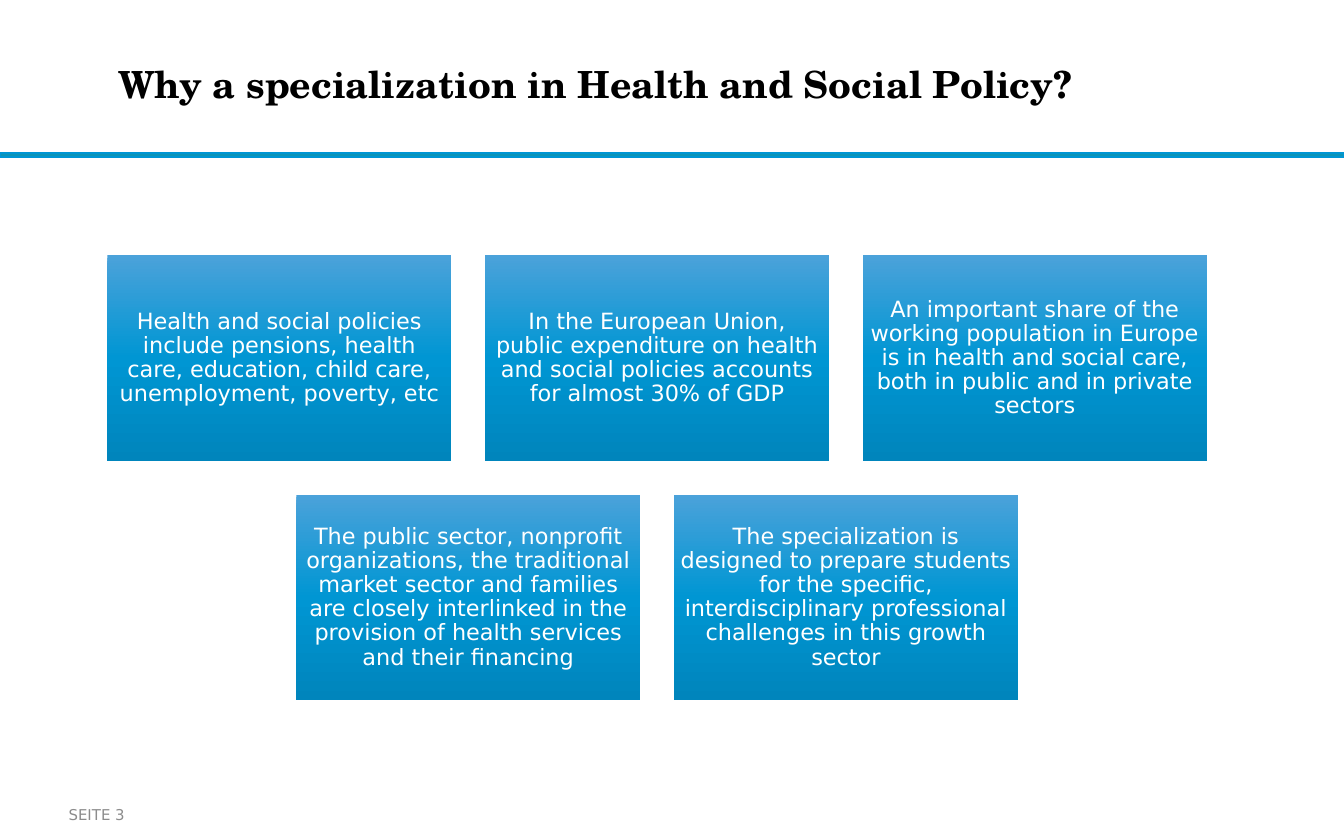
"""Build the slide on why to specialize in Health and Social Policy."""
import copy

import pptx
import pptx.dml.color
import pptx.enum.shapes
import pptx.enum.text
import pptx.util
from pptx.util import Inches

SANS = "DejaVu Sans"
SERIF = "TeX Gyre Schola"
GRADIENT = [(0, "4BA2DA"), (0.5, "0096D3"), (1, "0085BC")]
REASON_ROWS = [
    [
        "Health and social policies include pensions, health care, education, "
        "child care, unemployment, poverty, etc",
        "In the European Union, public expenditure on health and social "
        "policies accounts for almost 30% of GDP",
        "An important share of the working population in Europe is in health "
        "and social care, both in public and in private sectors",
    ],
    [
        "The public sector, nonprofit organizations, the traditional market "
        "sector and families are closely interlinked in the provision of "
        "health services and their financing",
        "The specialization is designed to prepare students for the specific, "
        "interdisciplinary professional challenges in this growth sector",
    ],
]


def rgb(value):
    """Turn a hex string into a colour."""
    return pptx.dml.color.RGBColor.from_string(value)


def write(sp, text, size, font, color, inset_x=0, inset_y=0, bold=False):
    """Write one vertically centred paragraph and return it."""
    tf = sp.text_frame
    tf.word_wrap = True
    tf.vertical_anchor = pptx.enum.text.MSO_ANCHOR.MIDDLE
    tf.margin_left = tf.margin_right = Inches(inset_x)
    tf.margin_top = tf.margin_bottom = Inches(inset_y)
    p = tf.paragraphs[0]
    p.text = text
    p.font.size = pptx.util.Pt(size)
    p.font.name = font
    p.font.bold = bold
    p.font.color.rgb = rgb(color)
    return p


def add_rect(s, left, top, width, height):
    """Add a rectangle without a shadow."""
    sp = s.shapes.add_shape(
        pptx.enum.shapes.MSO_SHAPE.RECTANGLE, left, top, width, height
    )
    sp.shadow.inherit = False
    return sp


def fill_gradient(sp):
    """Fill a shape from light at the top to dark at the bottom."""
    sp.fill.gradient()
    sp.fill.gradient_angle = 270
    stops = sp._element.spPr.gradFill.gsLst
    stops.append(copy.deepcopy(stops[0]))
    for stop, (position, color) in zip(sp.fill.gradient_stops, GRADIENT):
        stop.position = position
        stop.color.rgb = rgb(color)


def add_header(s, left, top, width, height):
    """Add the title and the full-width rule below it."""
    title = s.shapes.add_textbox(left, top, width, height)
    write(title, "Why a specialization in Health and Social Policy?",
          20, SERIF, "000000", bold=True)
    rule = add_rect(s, 0, top + height + Inches(0.02), Inches(10), Inches(0.03))
    rule.fill.solid()
    rule.fill.fore_color.rgb = rgb("0C94B7")
    rule.line.color.rgb = rgb("0096D3")
    rule.line.width = pptx.util.Pt(1)


def add_reasons(s, left, top, width, height):
    """Add the reason boxes in centred rows."""
    gap = Inches(0.25)
    box_w = (width - 2 * gap) // 3
    box_h = (height - gap) // 2
    for row, reasons in enumerate(REASON_ROWS):
        row_w = len(reasons) * (box_w + gap) - gap
        x = left + (width - row_w) // 2
        y = top + row * (box_h + gap)
        for col, reason in enumerate(reasons):
            sp = add_rect(s, x + col * (box_w + gap), y, box_w, box_h)
            fill_gradient(sp)
            sp.line.fill.background()
            p = write(sp, reason, 12, SANS, "FFFFFF", 0.05, 0.05)
            p.alignment = pptx.enum.text.PP_ALIGN.CENTER
            p.line_spacing = 0.9


def add_footer(s, left, top, width, height):
    """Add the page number."""
    sp = s.shapes.add_textbox(left, top, width, height)
    write(sp, "SEITE 3", 8, SANS, "8C8C8C", inset_y=0.05)


def main():
    """Build and save the slide."""
    prs = pptx.Presentation()
    prs.slide_width, prs.slide_height = Inches(10), Inches(6.25)
    s = prs.slides.add_slide(prs.slide_layouts[6])
    add_header(s, Inches(0.88), Inches(0.13), Inches(7.72), Inches(0.99))
    add_reasons(s, Inches(0.8), Inches(1.9), Inches(8.18), Inches(3.31))
    add_footer(s, Inches(0.51), Inches(5.92), Inches(0.98), Inches(0.28))
    prs.save("out.pptx")


if __name__ == "__main__":
    main()
